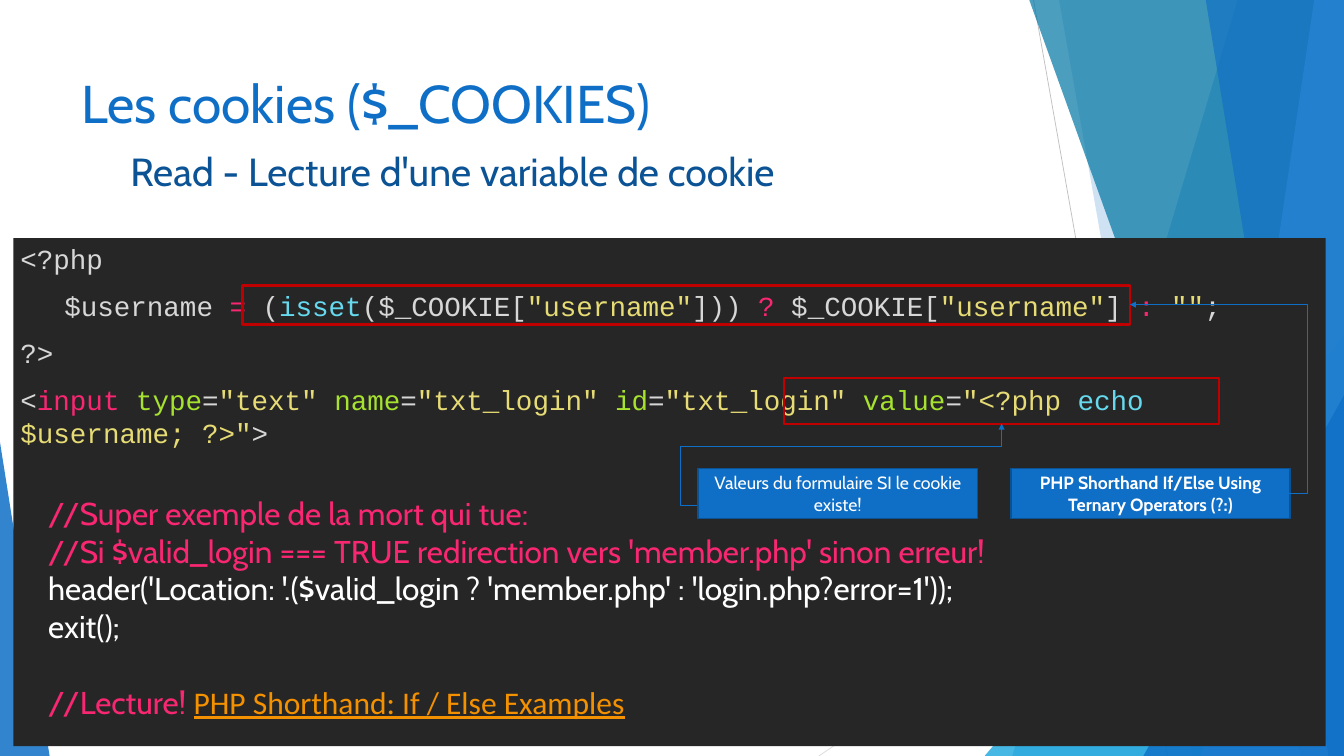
from dataclasses import dataclass

from lxml.etree import SubElement
from pptx import Presentation
from pptx.dml.color import RGBColor
from pptx.enum.shapes import MSO_CONNECTOR, MSO_SHAPE
from pptx.enum.text import MSO_ANCHOR, PP_ALIGN
from pptx.oxml.ns import qn
from pptx.util import Inches, Pt

WIDTH, HEIGHT = 18.96, 10.67


@dataclass(frozen=True)
class Theme:
    """Colours, fonts and type sizes of the slide."""
    blue: str = "0F6FC6"
    navy: str = "0B5394"
    edge: str = "0B5292"
    cyan: str = "009DD9"
    teal: str = "0076A3"
    sky: str = "59AAF2"
    panel: str = "262626"
    white: str = "FFFFFF"
    red: str = "C00000"
    orange: str = "F49100"
    plain: str = "D7D7D7"
    operator: str = "F92672"
    function: str = "66D9EF"
    string: str = "E6DB74"
    attribute: str = "A6E22E"
    line_dark: str = "BFBFBF"
    line_light: str = "D9D9D9"
    font: str = "Cabin"
    code_font: str = "Courier New"
    link_font: str = "Calibri"
    title_size: float = 54
    subtitle_size: float = 39.8
    example_size: float = 32
    code_size: float = 28
    callout_size: float = 18


THEME = Theme()

BANDS = [
    (17.46, 14.28, THEME.blue, 30),
    (14.94, 16.82, THEME.blue, 20),
    (14.52, 18.36, THEME.teal, 70),
    (18.54, 16.95, THEME.sky, 70),
    (17.01, 18.74, THEME.blue, 65),
]
TRIANGLES = [
    ((13.89, 4.74, 5.07, 5.93), 1, THEME.cyan, 72),
    ((16.13, 5.58, 2.83, 5.09), 1, THEME.blue, 80),
    ((0, 6.24, 0.7, 4.43), 0, THEME.blue, 85),
]
CODE = [
    [("<?php", "plain")],
    [("$username ", "plain"), ("=", "operator"), (" (", "plain"), ("isset", "function"),
     ("($_COOKIE[", "plain"), ('"username"', "string"), ("])) ", "plain"),
     ("?", "operator"), (" $_COOKIE[", "plain"), ('"username"', "string"),
     ("] ", "plain"), (": ", "operator"), ('""', "string"), (";", "plain")],
    [("?>", "plain")],
    [("<", "plain"), ("input ", "operator"), ("type", "attribute"), ("=", "plain"),
     ('"text" ', "string"), ("name", "attribute"), ("=", "plain"),
     ('"txt_login" ', "string"), ("id", "attribute"), ("=", "plain"),
     ('"txt_login" ', "string"), ("value", "attribute"), ("=", "plain"),
     ('"<?php ', "string"), ("echo", "function"), (' $username; ?>"', "string"),
     (">", "plain")],
]
EXAMPLE = [
    [("//Super exemple de la mort qui tue:", "operator")],
    [("//Si $valid_login === TRUE redirection vers 'member.php' sinon erreur!", "operator")],
    [("header('Location: '.($valid_login ? 'member.php' : 'login.php?error=1'));", "white")],
    [("exit();", "white")],
    [("//Lecture! ", "operator")],
]


def apply_format(target, **values):
    """Set every given attribute on the target."""
    for name, value in values.items():
        setattr(target, name, value)


def paint(shape, fill=None, opacity=100, line=None, weight=1):
    """Give a shape its fill and outline, without a shadow."""
    shape.shadow.inherit = False
    if fill:
        shape.fill.solid()
        shape.fill.fore_color.rgb = RGBColor.from_string(fill)
        if opacity < 100:
            color = shape.fill._xPr.find(qn("a:solidFill"))[0]
            SubElement(color, qn("a:alpha"), val=str(opacity * 1000))
    else:
        shape.fill.background()
    if line:
        shape.line.color.rgb = RGBColor.from_string(line)
        shape.line.width = Pt(weight)
    else:
        shape.line.fill.background()


def add_box(slide, box, kind=MSO_SHAPE.RECTANGLE, **style):
    """Add a painted preset shape."""
    shape = slide.shapes.add_shape(kind, *map(Inches, box))
    paint(shape, **style)
    return shape


def add_band(slide, top, bottom, fill, opacity):
    """Add a band from a slanted left edge to the right side of the slide."""
    builder = slide.shapes.build_freeform(Inches(top), 0)
    corners = [(WIDTH, 0), (WIDTH, HEIGHT), (bottom, HEIGHT)]
    builder.add_line_segments([(Inches(x), Inches(y)) for x, y in corners])
    paint(builder.convert_to_shape(), fill, opacity)


def add_line(slide, start, end, color, weight, kind=MSO_CONNECTOR.STRAIGHT):
    """Add a connector without a shadow."""
    connector = slide.shapes.add_connector(kind, *map(Inches, start + end))
    connector.line.color.rgb = RGBColor.from_string(color)
    connector.line.width = Pt(weight)
    SubElement(connector._element.spPr, qn("a:effectLst"))
    return connector


def add_bent_arrow(slide, start, end, adjustments):
    """Add an elbow arrow whose bends follow the adjustments."""
    connector = add_line(slide, start, end, THEME.blue, 1, MSO_CONNECTOR.ELBOW)
    properties = connector._element.spPr
    geometry = properties.find(qn("a:prstGeom"))
    geometry.set("prst", f"bentConnector{len(adjustments) + 2}")
    guides = geometry.find(qn("a:avLst"))
    for number, share in enumerate(adjustments, 1):
        SubElement(guides, qn("a:gd"), name=f"adj{number}", fmla=f"val {round(share * 100000)}")
    SubElement(properties.find(qn("a:ln")), qn("a:tailEnd"), type="triangle")


def add_run(paragraph, text, color, size, font=THEME.font, **extra):
    """Add one formatted run."""
    run = paragraph.add_run()
    run.text = text
    run.font.color.rgb = RGBColor.from_string(color)
    apply_format(run.font, name=font, size=Pt(size), **extra)


def write(shape, lines, size, font=THEME.font, align=PP_ALIGN.LEFT,
          anchor=MSO_ANCHOR.TOP, **extra):
    """Write lines of (text, colour name) runs and return the paragraphs."""
    frame = shape.text_frame
    apply_format(frame, word_wrap=True, vertical_anchor=anchor, margin_left=Inches(0.1),
                 margin_right=Inches(0.1), margin_top=Inches(0.05), margin_bottom=Inches(0.05))
    for index, runs in enumerate(lines):
        paragraph = frame.add_paragraph() if index else frame.paragraphs[0]
        paragraph.alignment = align
        for text, color in runs:
            add_run(paragraph, text, getattr(THEME, color), size, font, **extra)
    return frame.paragraphs


def add_text(slide, box, lines, size):
    """Add a text box and return its paragraphs."""
    return write(slide.shapes.add_textbox(*map(Inches, box)), lines, size)


def add_callout(slide, left, text, bold=False):
    """Add a blue explanation box."""
    shape = add_box(slide, (left, 6.61, 3.94, 0.71), fill=THEME.blue, line=THEME.edge, weight=1.5)
    write(shape, [[(text, "white")]], THEME.callout_size, align=PP_ALIGN.CENTER,
          anchor=MSO_ANCHOR.MIDDLE, bold=bold)


def add_background(slide):
    """Add the lines, bands and triangles behind the content."""
    add_line(slide, (14.58, 0), (16.47, HEIGHT), THEME.line_dark, 0.75)
    add_line(slide, (WIDTH, 5.73), (11.55, HEIGHT), THEME.line_light, 0.75)
    for band in BANDS[:2]:
        add_band(slide, *band)
    for index, (box, apex, fill, opacity) in enumerate(TRIANGLES):
        triangle = add_box(slide, box, MSO_SHAPE.ISOSCELES_TRIANGLE, fill=fill, opacity=opacity)
        triangle.adjustments[0] = apex
        if index == 0:
            for band in BANDS[2:]:
                add_band(slide, *band)


def add_code(slide):
    """Add the dark panel with the highlighted code."""
    panel = add_box(slide, (0.19, 3.36, 18.51, 7.17), fill=THEME.panel)
    paragraphs = write(panel, CODE, THEME.code_size, THEME.code_font)
    for paragraph in paragraphs[1:]:
        paragraph.space_before = Pt(14.2)
    paragraphs[1]._p.get_or_add_pPr().set("marL", str(Inches(0.62)))


def main():
    """Build and save the slide."""
    presentation = Presentation()
    apply_format(presentation, slide_width=Inches(WIDTH), slide_height=Inches(HEIGHT))
    slide = presentation.slides.add_slide(presentation.slide_layouts[6])
    add_background(slide)
    add_text(slide, (1.74, 2.03, 12.68, 0.92),
             [[("Read - Lecture d'une variable de cookie", "navy")]], THEME.subtitle_size)
    add_text(slide, (1.05, 0.95, 13.37, 1.08),
             [[("Les cookies ($_COOKIES)", "blue")]], THEME.title_size)
    add_code(slide)
    add_box(slide, (11.06, 5.33, 6.14, 0.65), line=THEME.red, weight=2.25)
    add_bent_arrow(slide, (9.85, 7.13), (14.13, 5.98), [-0.058, 0.724])
    add_callout(slide, 9.85, "Valeurs du formulaire SI le cookie existe!")
    add_callout(slide, 14.26, "PHP Shorthand If/Else Using Ternary Operators (?:)", bold=True)
    add_box(slide, (3.42, 4.03, 12.52, 0.55), line=THEME.red, weight=2.25)
    add_bent_arrow(slide, (18.19, 6.96), (15.94, 4.3), [-0.111])
    reading = add_text(slide, (0.58, 6.92, 18.19, 3.33), EXAMPLE, THEME.example_size)[-1]
    reading.space_before = Pt(38.5)
    add_run(reading, "PHP Shorthand: If / Else Examples", THEME.orange,
            THEME.example_size, THEME.link_font, underline=True)
    presentation.save("out.pptx")


if __name__ == "__main__":
    main()
